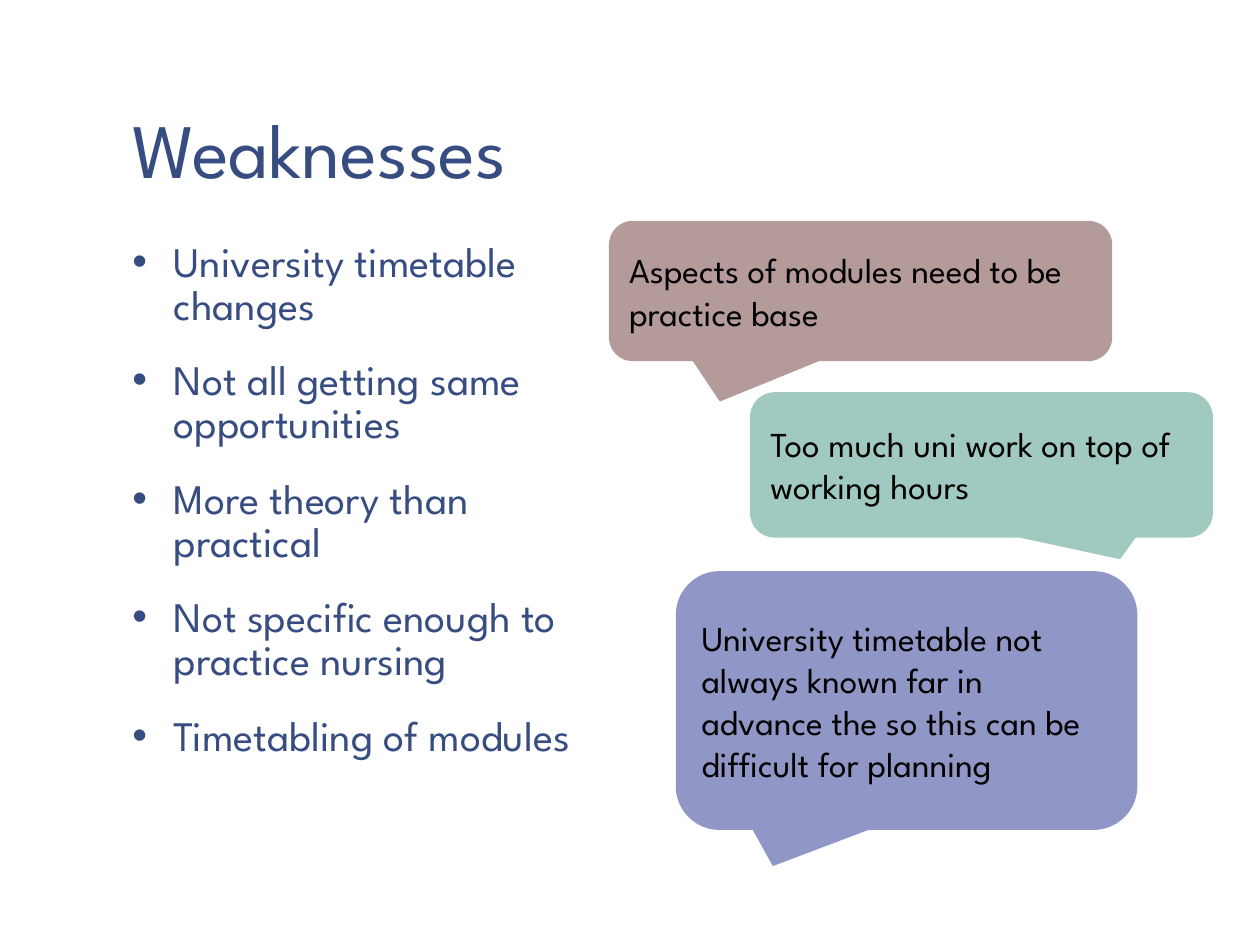
from dataclasses import dataclass

from lxml.etree import SubElement
from pptx import Presentation
from pptx.dml.color import RGBColor
from pptx.enum.shapes import MSO_SHAPE
from pptx.enum.text import MSO_ANCHOR, MSO_AUTO_SIZE, PP_ALIGN
from pptx.oxml.ns import qn
from pptx.slide import Slide
from pptx.text.text import TextFrame, _Paragraph
from pptx.util import Inches, Pt

FONT = "League Spartan"
COLORS = {
    "background": "FFFFFF",
    "heading": "374C81",
    "quote": "000000",
    "rose": "B59A9A",
    "mint": "A0CAC0",
    "lavender": "9097C6",
}
WEAKNESSES = [
    "University timetable changes",
    "Not all getting same opportunities",
    "More theory than practical",
    "Not specific enough to practice nursing",
    "Timetabling of modules",
]


@dataclass
class Callout:
    text: str
    color: str
    left: float
    top: float
    width: float
    height: float
    tip_x: float
    tip_y: float


CALLOUTS = [
    Callout("Aspects of modules need to be practice base", "rose",
            4.84, 1.76, 3.98, 1.1, -0.28, 0.79),
    Callout("Too much uni work on top of working hours", "mint",
            5.96, 3.12, 3.66, 1.14, 0.3, 0.65),
    Callout("University timetable not always known far in advance the so "
            "this can be difficult for planning", "lavender",
            5.37, 4.54, 3.65, 2.04, -0.29, 0.64),
]


def rgb(name: str) -> RGBColor:
    return RGBColor.from_string(COLORS[name])


def format_paragraph(para: _Paragraph, size: int, color: str) -> None:
    para.alignment = PP_ALIGN.LEFT
    para.font.name = FONT
    para.font.size = Pt(size)
    para.font.color.rgb = rgb(color)


def set_frame(frame: TextFrame, anchor: MSO_ANCHOR) -> None:
    frame.word_wrap = True
    frame.auto_size = MSO_AUTO_SIZE.NONE
    frame.vertical_anchor = anchor
    frame.margin_left = frame.margin_right = Inches(0.13)
    frame.margin_top = frame.margin_bottom = Inches(0.07)


def add_bullet(para: _Paragraph) -> None:
    properties = para._p.get_or_add_pPr()
    properties.set("marL", str(Inches(0.33)))
    properties.set("indent", str(-Inches(0.33)))
    SubElement(properties, qn("a:buFont"), typeface="Arial")
    SubElement(properties, qn("a:buChar"), char="•")


def set_title(page: Slide, text: str) -> None:
    title = page.shapes.title
    title.left, title.top = Inches(0.92), Inches(0.08)
    title.width, title.height = Inches(8.33), Inches(1.53)
    title.text_frame.text = text
    set_frame(title.text_frame, MSO_ANCHOR.BOTTOM)
    para = title.text_frame.paragraphs[0]
    para.line_spacing = 0.85
    format_paragraph(para, 44, "heading")


def add_bullet_list(page: Slide, items: list[str]) -> None:
    box = page.shapes.add_textbox(Inches(0.92), Inches(1.86), Inches(4.08), Inches(4.89))
    frame = box.text_frame
    set_frame(frame, MSO_ANCHOR.TOP)
    frame.text = "\n".join(items)
    for index, para in enumerate(frame.paragraphs):
        para.line_spacing = 0.85
        para.space_before = Pt(18.7 if index else 0)
        add_bullet(para)
        format_paragraph(para, 24, "heading")


def add_callout(page: Slide, callout: Callout) -> None:
    shape = page.shapes.add_shape(
        MSO_SHAPE.ROUNDED_RECTANGULAR_CALLOUT,
        Inches(callout.left), Inches(callout.top),
        Inches(callout.width), Inches(callout.height),
    )
    shape.adjustments[0] = callout.tip_x
    shape.adjustments[1] = callout.tip_y
    shape.shadow.inherit = False
    shape.fill.solid()
    shape.fill.fore_color.rgb = rgb(callout.color)
    shape.line.color.rgb = rgb(callout.color)
    shape.line.width = Pt(1)
    frame = shape.text_frame
    frame.word_wrap = True
    frame.vertical_anchor = MSO_ANCHOR.MIDDLE
    frame.text = callout.text
    format_paragraph(frame.paragraphs[0], 20, "quote")


def main() -> None:
    deck = Presentation()
    deck.slide_width, deck.slide_height = Inches(10), Inches(7.5)
    page = deck.slides.add_slide(deck.slide_layouts[5])
    page.background.fill.solid()
    page.background.fill.fore_color.rgb = rgb("background")
    set_title(page, "Weaknesses")
    add_bullet_list(page, WEAKNESSES)
    for callout in CALLOUTS:
        add_callout(page, callout)
    deck.save("out.pptx")


if __name__ == "__main__":
    main()
